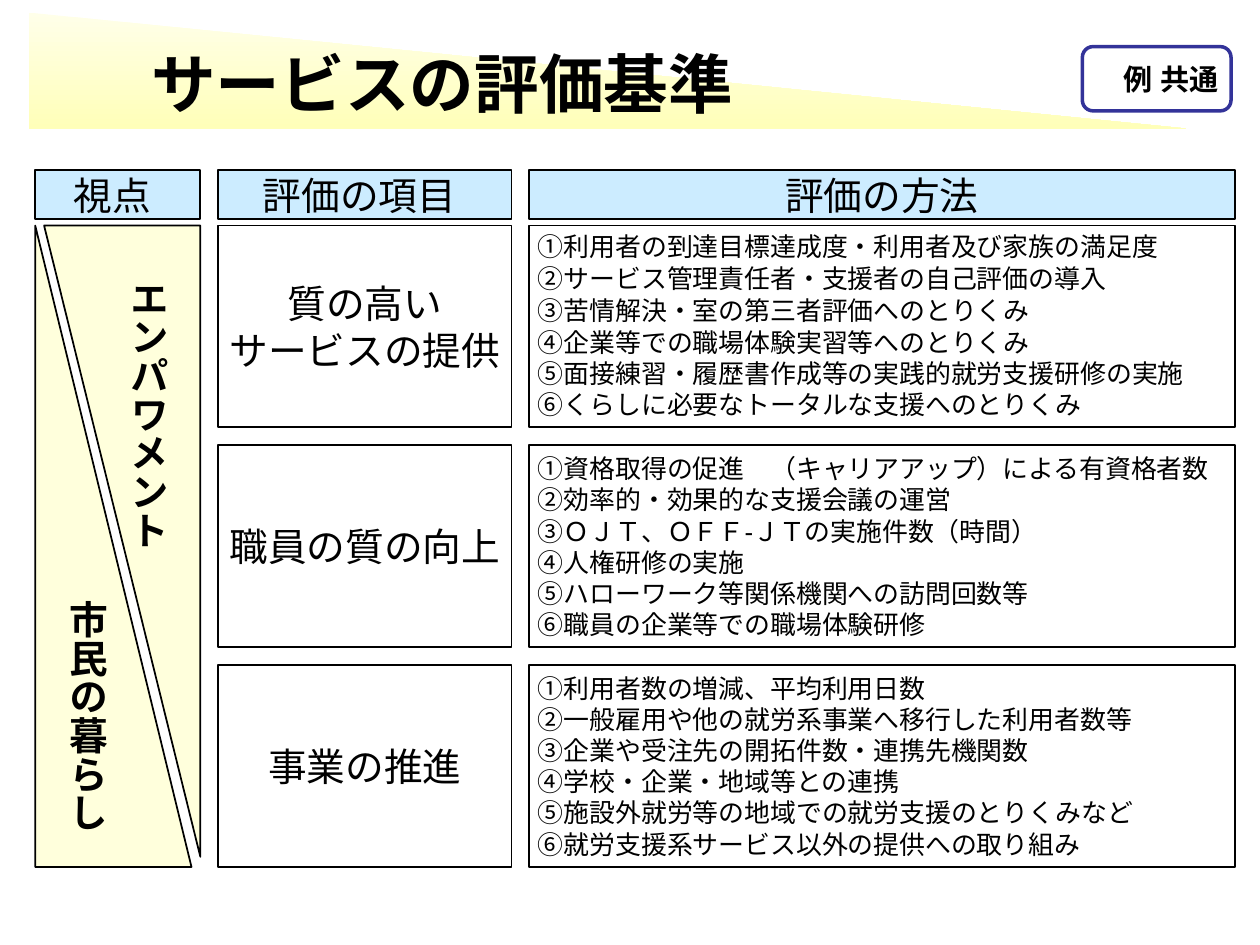
from lxml import etree
from pptx import Presentation
from pptx import util as u
from pptx.dml.color import RGBColor
from pptx.enum import shapes, text
from pptx.oxml import ns

SCALE = 9144
ROW_HEIGHT, ROW_PITCH, ROWS_TOP = 160, 174.5, 179
HEADER_TOP, HEADER_HEIGHT = 135, 39
VIEW_LEFT, VIEW_WIDTH = 28, 131
ITEM_LEFT, ITEM_WIDTH = 173, 233
METHOD_LEFT, METHOD_WIDTH = 420, 560

ROWS = [
    (["質の高い", "サービスの提供"], "Arial", [
        "①利用者の到達目標達成度・利用者及び家族の満足度",
        "②サービス管理責任者・支援者の自己評価の導入",
        "③苦情解決・室の第三者評価へのとりくみ",
        "④企業等での職場体験実習等へのとりくみ",
        "⑤面接練習・履歴書作成等の実践的就労支援研修の実施",
        "⑥くらしに必要なトータルな支援へのとりくみ"]),
    (["職員の質の向上"], "Noto Sans CJK JP", [
        "①資格取得の促進　（キャリアアップ）による有資格者数",
        "②効率的・効果的な支援会議の運営",
        "③ＯＪＴ、ＯＦＦ-ＪＴの実施件数（時間）",
        "④人権研修の実施",
        "⑤ハローワーク等関係機関への訪問回数等",
        "⑥職員の企業等での職場体験研修"]),
    (["事業の推進"], "Arial", [
        "①利用者数の増減、平均利用日数",
        "②一般雇用や他の就労系事業へ移行した利用者数等",
        "③企業や受注先の開拓件数・連携先機関数",
        "④学校・企業・地域等との連携",
        "⑤施設外就労等の地域での就労支援のとりくみなど",
        "⑥就労支援系サービス以外の提供への取り組み"]),
]


def px(value):
    return u.Emu(round(value * SCALE))


def color(value):
    return RGBColor.from_string(value)


def write(shape, lines, size, bold=False, font="Arial",
          align=text.PP_ALIGN.CENTER, wrap=True, margins=(7, 1)):
    frame = shape.text_frame
    frame.word_wrap = wrap
    frame.vertical_anchor = text.MSO_ANCHOR.MIDDLE
    frame.margin_left = frame.margin_right = px(margins[0])
    frame.margin_top = frame.margin_bottom = px(margins[1])
    for index, line in enumerate(lines):
        paragraph = frame.add_paragraph() if index else frame.paragraphs[0]
        paragraph.alignment = align
        run = paragraph.add_run()
        run.text = line
        run.font.size = u.Pt(size)
        run.font.bold = bold
        run.font.name = font
        run.font.color.rgb = color("000000")
        properties = run.font._element
        properties.set("lang", "ja-JP")
        etree.SubElement(properties, ns.qn("a:ea")).set("typeface", font)
    return frame


def add_box(slide, kind, left, top, width, height, fill=None, line="000000", weight=1):
    shape = slide.shapes.add_shape(kind, px(left), px(top), px(width), px(height))
    shape.shadow.inherit = False
    if fill:
        shape.fill.solid()
        shape.fill.fore_color.rgb = color(fill)
    else:
        shape.fill.background()
    if line:
        shape.line.color.rgb = color(line)
        shape.line.width = u.Pt(weight)
    else:
        shape.line.fill.background()
    return shape


def add_title(slide, left, top, width, height):
    band = add_box(slide, shapes.MSO_SHAPE.RIGHT_TRIANGLE, left, top, width, height, line=None)
    band.fill.gradient()
    band.fill.gradient_angle = 270
    for stop, value in zip(band.fill.gradient_stops, ("FFFFE9", "FFFFB9")):
        stop.color.rgb = color(value)
    title = slide.shapes.add_textbox(px(left + 61), px(top + 20), px(534), px(71))
    write(title, ["サービスの評価基準"], 36.9, bold=True, margins=(10, 5))


def add_badge(slide, left, top, width, height):
    badge = add_box(slide, shapes.MSO_SHAPE.ROUNDED_RECTANGLE, left, top, width, height,
                    "FFFFFF", "333399", 2)
    write(badge, ["　例 共通"], 16.6, bold=True, wrap=False)


def add_header(slide, left, top, width, height, label):
    header = add_box(slide, shapes.MSO_SHAPE.RECTANGLE, left, top, width, height, "CCECFF")
    write(header, [label], 22.1)


def add_row(slide, top, height, item, font, methods):
    item_box = add_box(slide, shapes.MSO_SHAPE.RECTANGLE, ITEM_LEFT, top, ITEM_WIDTH, height)
    write(item_box, item, 22.1, font=font)
    method_box = add_box(slide, shapes.MSO_SHAPE.RECTANGLE, METHOD_LEFT, top, METHOD_WIDTH, height)
    return write(method_box, methods, 14.8, align=text.PP_ALIGN.LEFT)


def add_view_triangle(slide, left, top, width, height, label, turn=0):
    triangle = add_box(slide, shapes.MSO_SHAPE.RIGHT_TRIANGLE, left, top, width, height, "FFFFB9")
    triangle.rotation = turn
    solid_color = triangle.fill._xPr.find(ns.qn("a:solidFill"))[0]
    etree.SubElement(solid_color, ns.qn("a:alpha")).set("val", "49000")
    frame = write(triangle, [label], 22.1, bold=True, wrap=False)
    body = frame._txBody.bodyPr
    body.set("vert", "eaVert")
    if turn:
        body.set("rot", str(turn * 60000))


def add_view_column(slide, left, top, width, height):
    gap = 7
    add_view_triangle(slide, left + gap, top, width - gap, height - gap - 1,
                      "エンパワメント", turn=180)
    add_view_triangle(slide, left, top, width - gap, height, "市民の暮らし")


def main():
    presentation = Presentation()
    presentation.slide_width, presentation.slide_height = px(1000), px(750)
    slide = presentation.slides.add_slide(presentation.slide_layouts[6])
    add_title(slide, 23, 10, 918, 92)
    add_badge(slide, 859, 37, 118, 51)
    for left, width, label in ((VIEW_LEFT, VIEW_WIDTH, "視点 "),
                               (ITEM_LEFT, ITEM_WIDTH, "評価の項目 "),
                               (METHOD_LEFT, METHOD_WIDTH, "評価の方法")):
        add_header(slide, left, HEADER_TOP, width, HEADER_HEIGHT, label)
    for index, (item, font, methods) in enumerate(ROWS):
        frame = add_row(slide, ROWS_TOP + index * ROW_PITCH, ROW_HEIGHT, item, font, methods)
        if index == 0:
            for paragraph in frame.paragraphs[:3]:
                paragraph.line_spacing = 0.95
                paragraph.space_before = u.Pt(1.5)
    add_view_column(slide, VIEW_LEFT, ROWS_TOP, VIEW_WIDTH, 509)
    presentation.save("out.pptx")


if __name__ == "__main__":
    main()
